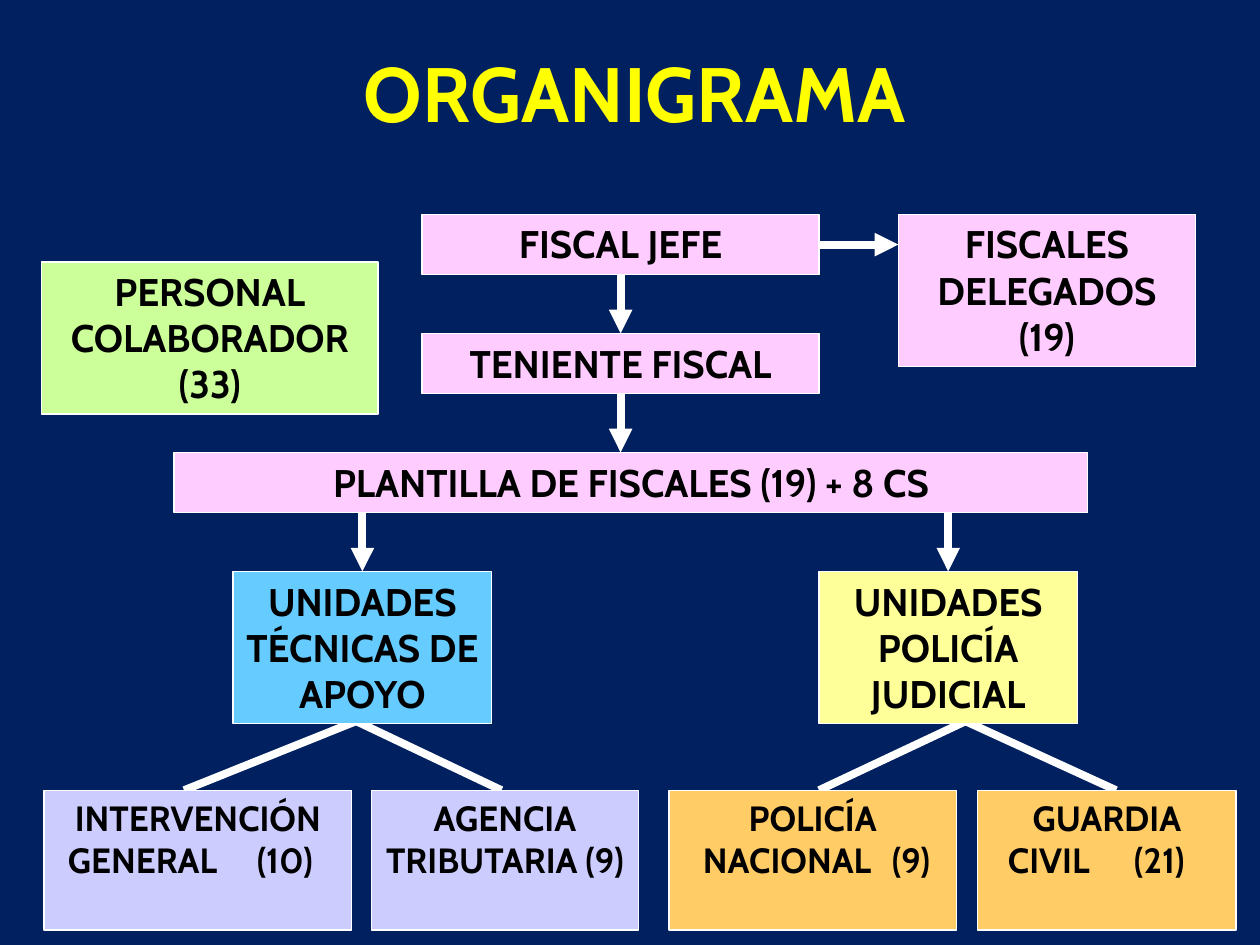
from pptx import Presentation
from pptx import util as u
from pptx.dml import color
from pptx.enum import shapes, text
from pptx.oxml import ns
from lxml import etree

NAVY = color.RGBColor(0x00, 0x20, 0x60)
WHITE = color.RGBColor(0xFF, 0xFF, 0xFF)
BLACK = color.RGBColor(0x00, 0x00, 0x00)
YELLOW = color.RGBColor(0xFF, 0xFF, 0x00)
PINK = color.RGBColor(0xFF, 0xCC, 0xFF)
GREEN = color.RGBColor(0xCC, 0xFF, 0x99)
BLUE = color.RGBColor(0x66, 0xCC, 0xFF)
CREAM = color.RGBColor(0xFF, 0xFF, 0x99)
LILAC = color.RGBColor(0xCC, 0xCC, 0xFF)
ORANGE = color.RGBColor(0xFF, 0xCC, 0x66)

TOP, LEFT, BOTTOM, RIGHT = range(4)
SHORT, TALL, LEAF = 1.22, 3.07, 2.82
ROWS = [4.32 + 2.4 * n for n in range(4)]
BASE = 15.93


class Chart:
    font = "Cabin"
    size = 22

    def __init__(self, slide):
        self.slide = slide
        fill = slide.background.fill
        fill.solid()
        fill.fore_color.rgb = NAVY

    def label(self, para, words, size, ink):
        para.text = words
        para.alignment = text.PP_ALIGN.CENTER
        font = para.font
        font.name, font.size, font.bold = self.font, u.Pt(size), True
        font.color.rgb = ink

    def title(self, words, *place):
        box = self.slide.shapes.add_textbox(*map(u.Cm, place))
        box.text_frame.word_wrap = True
        self.label(box.text_frame.paragraphs[0], words, 44, YELLOW)

    def box(self, words, fill, *place, size=size):
        box = self.slide.shapes.add_shape(
            shapes.MSO_SHAPE.RECTANGLE, *map(u.Cm, place))
        box.shadow.inherit = False
        box.fill.solid()
        box.fill.fore_color.rgb = fill
        box.line.color.rgb = WHITE
        box.line.width = u.Pt(0.75)
        frame = box.text_frame
        frame.word_wrap = True
        frame.vertical_anchor = text.MSO_ANCHOR.TOP
        self.label(frame.paragraphs[0], words, size, BLACK)
        return box

    def count(self, box, words, indent, stop, size):
        para = box.text_frame.add_paragraph()
        self.label(para, words, size, BLACK)
        para.alignment = text.PP_ALIGN.LEFT
        props = para._p.get_or_add_pPr()
        props.set("marL", str(u.Cm(indent)))
        props.set("indent", "0")
        tabs = etree.Element(ns.qn("a:tabLst"))
        etree.SubElement(tabs, ns.qn("a:tab"), pos=str(u.Cm(stop)), algn="l")
        props.insert(0, tabs)

    def line(self, start, end, arrow=False, source=None, target=None):
        link = self.slide.shapes.add_connector(
            shapes.MSO_CONNECTOR.STRAIGHT, *map(u.Cm, start + end))
        if source:
            link.begin_connect(*source)
        if target:
            link.end_connect(*target)
        link.line.color.rgb = WHITE
        link.line.width = u.Pt(4.5)
        props = link._element.spPr
        if arrow:
            etree.SubElement(props.find(ns.qn("a:ln")),
                             ns.qn("a:tailEnd"), type="triangle")
        etree.SubElement(props, ns.qn("a:effectLst"))


def main():
    deck = Presentation()
    deck.slide_width, deck.slide_height = u.Cm(25.4), u.Cm(19.05)
    chart = Chart(deck.slides.add_slide(deck.slide_layouts[6]))

    for start, end in [((18.11, 13.92), 22.5), ((19.91, 14.33), 16.51),
                       ((6.3, 14.12), 10.11), ((7.7, 14.33), 3.71)]:
        chart.line(start, (end, BASE))

    chart.title("ORGANIGRAMA", 1.19, 0.79, 23.22, 2.64)
    chief = chart.box("FISCAL JEFE", PINK, 8.51, ROWS[0], 8, SHORT)
    deputy = chart.box("TENIENTE FISCAL", PINK, 8.51, ROWS[1], 8, SHORT)
    chart.box("PLANTILLA DE FISCALES (19) + 8 CS", PINK,
              3.51, ROWS[2], 18.42, SHORT)
    chart.box("FISCALES DELEGADOS (19)", PINK, 18.11, ROWS[0], 5.99, TALL)
    chart.box("PERSONAL COLABORADOR (33)", GREEN, 0.84, 5.28, 6.78, TALL)

    for words, fill, left in [("UNIDADES TÉCNICAS DE APOYO", BLUE, 4.7),
                              ("UNIDADES POLICÍA JUDICIAL", CREAM, 16.51)]:
        unit = chart.box(words, fill, left, ROWS[3], 5.21, TALL)
        mid = left + 5.21 / 2
        chart.line((mid, ROWS[2] + SHORT), (mid, ROWS[3]), True,
                   target=(unit, TOP))

    chart.box("AGENCIA TRIBUTARIA (9)", LILAC, 7.49, BASE, 5.38, LEAF, size=20)
    for words, tally, fill, left, width, indent, stop in [
            ("INTERVENCIÓN", "GENERAL\t(10)", LILAC, 0.89, 6.2, 0.23, 4.34),
            ("POLICÍA", "NACIONAL\t(9)", ORANGE, 13.49, 5.79, 0.43, 4.12),
            ("GUARDIA", "CIVIL\t(21)", ORANGE, 19.71, 5.21, 0.36, 3.28)]:
        leaf = chart.box(words, fill, left, BASE, width, LEAF, size=20)
        chart.count(leaf, tally, indent, stop, 20)

    axis = 8.51 + 8 / 2
    chart.line((axis, ROWS[0] + SHORT), (axis, ROWS[1]), True,
               (chief, BOTTOM), (deputy, TOP))
    chart.line((axis, ROWS[1] + SHORT), (axis, ROWS[2]), True,
               (deputy, BOTTOM))
    level = ROWS[0] + SHORT / 2
    chart.line((16.51, level), (18.11, level), True, (chief, RIGHT))

    deck.save("out.pptx")


if __name__ == "__main__":
    main()
